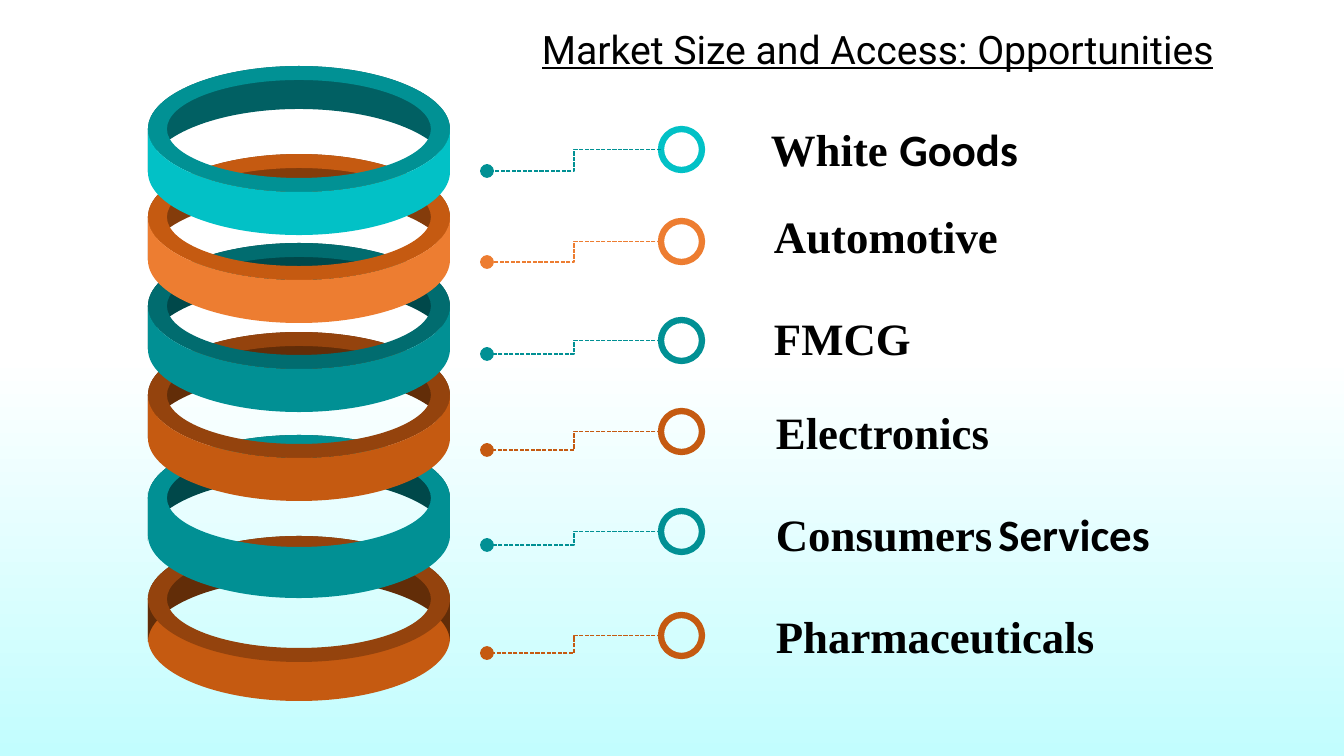
from dataclasses import dataclass
from math import cos, pi, sin
from typing import NamedTuple

from lxml.etree import SubElement
from pptx import Presentation
from pptx.dml.color import RGBColor
from pptx.enum.dml import MSO_LINE
from pptx.enum.shapes import MSO_CONNECTOR, MSO_SHAPE
from pptx.oxml.ns import qn
from pptx.shapes.base import BaseShape
from pptx.slide import Slide
from pptx.text.text import _Paragraph
from pptx.util import Pt

PX = 914400 / 100.8
COLORS = {
    "white": "FFFFFF",
    "ice": "C2FDFE",
    "black": "000000",
    "cyan": "02C1C6",
    "teal": "019094",
    "teal_rim": "019194",
    "teal_dark": "016C6F",
    "teal_deep": "016063",
    "teal_night": "00484A",
    "orange": "ED7D31",
    "rust": "C55A11",
    "rust_dark": "94430D",
    "rust_deep": "843C0B",
    "rust_night": "622D08",
}
RING_X = 299
OUTER = (151, 63)
INNER = (132, 49)
BAND_HEIGHT = 43
CURVE_PULL = 0.55
CIRCLE_LEFT = 661
CIRCLE_SIZE = 41
DOT_X = 487
LABEL_HEIGHT = 64

Point = tuple[int, int]


class Span(NamedTuple):
    text: str
    font: str = "Times New Roman"
    size: int = 32
    bold: bool = True
    underline: bool = False


@dataclass
class Ring:
    y: int
    back: str
    rim: str
    front: str
    front_lift: int = 0
    front_first: bool = False


@dataclass
class Sector:
    circle_top: int
    dot_y: int
    color: str
    dot_color: str
    label_box: tuple[int, int, int]
    spans: list[Span]


RINGS = [
    Ring(129, "teal_deep", "teal_rim", "cyan"),
    Ring(217, "rust_deep", "rust", "orange"),
    Ring(306, "teal_night", "teal_dark", "teal"),
    Ring(395, "rust_night", "rust_dark", "rust"),
    Ring(498, "teal_night", "teal", "teal", 6),
    Ring(599, "rust_night", "rust_dark", "rust", 4, True),
]

SECTORS = [
    Sector(129, 171, "cyan", "teal_rim", (761, 117, 348),
           [Span("White "), Span("Goods", "Calibri")]),
    Sector(221, 262, "orange", "orange", (764, 204, 426), [Span("Automotive")]),
    Sector(320, 354, "teal", "teal", (764, 306, 253), [Span("FMCG")]),
    Sector(411, 450, "rust", "rust", (766, 400, 363), [Span("Electronics")]),
    Sector(511, 545, "teal", "teal", (766, 502, 482),
           [Span("Consumers"), Span(" ", "Calibri", 18, False), Span("Services", "Calibri")]),
    Sector(615, 653, "rust", "rust", (766, 604, 529), [Span("Pharmaceuticals")]),
]


def emu(pixels: float) -> int:
    return round(pixels * PX)


def color(name: str) -> RGBColor:
    return RGBColor.from_string(COLORS[name])


def ellipse_point(y: int, radii: tuple[int, int], angle: float, pull: float = 0) -> Point:
    return (emu(RING_X + radii[0] * (cos(angle) - pull * sin(angle))),
            emu(y + radii[1] * (sin(angle) + pull * cos(angle))))


def arc(y: int, radii: tuple[int, int], start: float, quarters: int) -> list[Point]:
    direction = 1 if quarters > 0 else -1
    pull = CURVE_PULL * direction
    points = [ellipse_point(y, radii, start)]
    for quarter in range(abs(quarters)):
        begin = start + direction * quarter * pi / 2
        end = begin + direction * pi / 2
        points += [ellipse_point(y, radii, begin, pull),
                   ellipse_point(y, radii, end, -pull),
                   ellipse_point(y, radii, end)]
    return points


def bend_lines(shape: BaseShape) -> None:
    lines = list(shape._element.iter(qn("a:lnTo")))
    for first in range(0, len(lines), 3):
        curve = lines[first].makeelement(qn("a:cubicBezTo"))
        lines[first].addprevious(curve)
        for line in lines[first:first + 3]:
            curve.append(line[0])
            line.getparent().remove(line)


def draw_outline(slide: Slide, contours: list[list[Point]], fill: str) -> None:
    builder = slide.shapes.build_freeform(*contours[0][0], scale=1.0)
    builder.add_line_segments(contours[0][1:])
    for contour in contours[1:]:
        builder.move_to(*contour[0])
        builder.add_line_segments(contour[1:])
    shape = builder.convert_to_shape()
    bend_lines(shape)
    shape.shadow.inherit = False
    shape.fill.solid()
    shape.fill.fore_color.rgb = color(fill)
    shape.line.fill.background()


def draw_band(slide: Slide, y: int, quarters: int, fill: str) -> None:
    upper = arc(y, OUTER, 0, quarters)
    lower = arc(y + BAND_HEIGHT, OUTER, pi, -quarters)
    side = [upper[-1], lower[0]]
    draw_outline(slide, [upper + side + lower[1:]], fill) if len(side) % 3 == 0 else \
        draw_outline(slide, [upper + side + lower], fill)


def draw_ring(slide: Slide, ring: Ring) -> None:
    front_y = ring.y - ring.front_lift
    if ring.front_first:
        draw_band(slide, front_y, 2, ring.front)
    draw_band(slide, ring.y, -2, ring.back)
    rim = [arc(ring.y, OUTER, 0, 4), arc(ring.y, INNER, 0, -4)]
    draw_outline(slide, rim, ring.rim)
    if not ring.front_first:
        draw_band(slide, front_y, 2, ring.front)


def write_spans(paragraph: _Paragraph, spans: list[Span]) -> None:
    for span in spans:
        run = paragraph.add_run()
        run.text = span.text
        run.font.name = span.font
        run.font.size = Pt(span.size)
        run.font.bold = span.bold
        run.font.underline = span.underline
        run.font.color.rgb = color("black")


def draw_text(slide: Slide, left: int, top: int, width: int, height: int,
              spans: list[Span]) -> None:
    box = slide.shapes.add_textbox(emu(left), emu(top), emu(width), emu(height))
    box.text_frame.word_wrap = True
    write_spans(box.text_frame.paragraphs[0], spans)


def draw_sector(slide: Slide, sector: Sector) -> None:
    circle = slide.shapes.add_shape(
        MSO_SHAPE.OVAL, emu(CIRCLE_LEFT), emu(sector.circle_top),
        emu(CIRCLE_SIZE), emu(CIRCLE_SIZE))
    circle.shadow.inherit = False
    circle.fill.background()
    circle.line.color.rgb = color(sector.color)
    circle.line.width = Pt(4.5)

    connector = slide.shapes.add_connector(
        MSO_CONNECTOR.ELBOW, emu(CIRCLE_LEFT), emu(sector.circle_top + CIRCLE_SIZE / 2),
        emu(DOT_X), emu(sector.dot_y))
    connector.line.color.rgb = color(sector.dot_color)
    connector.line.width = Pt(1)
    connector.line.dash_style = MSO_LINE.SQUARE_DOT
    properties = connector._element.spPr
    SubElement(properties.find(qn("a:ln")), qn("a:tailEnd"), type="oval", w="lg", len="lg")
    SubElement(properties, qn("a:effectLst"))

    draw_text(slide, *sector.label_box, LABEL_HEIGHT, sector.spans)


def paint_background(slide: Slide) -> None:
    fill = slide.background.fill
    fill.gradient()
    fill.gradient_angle = 270
    for stop, position, name in zip(fill.gradient_stops, (0.47, 1), ("white", "ice")):
        stop.position = position
        stop.color.rgb = color(name)


def main() -> None:
    presentation = Presentation()
    presentation.slide_width = emu(1344)
    presentation.slide_height = emu(756)
    slide = presentation.slides.add_slide(presentation.slide_layouts[6])
    paint_background(slide)
    title = Span("Market Size and Access: Opportunities", "Roboto", 28, False, True)
    draw_text(slide, 532, 20, 774, 57, [title])
    for ring in reversed(RINGS):
        draw_ring(slide, ring)
    for sector in SECTORS:
        draw_sector(slide, sector)
    presentation.save("out.pptx")


if __name__ == "__main__":
    main()
